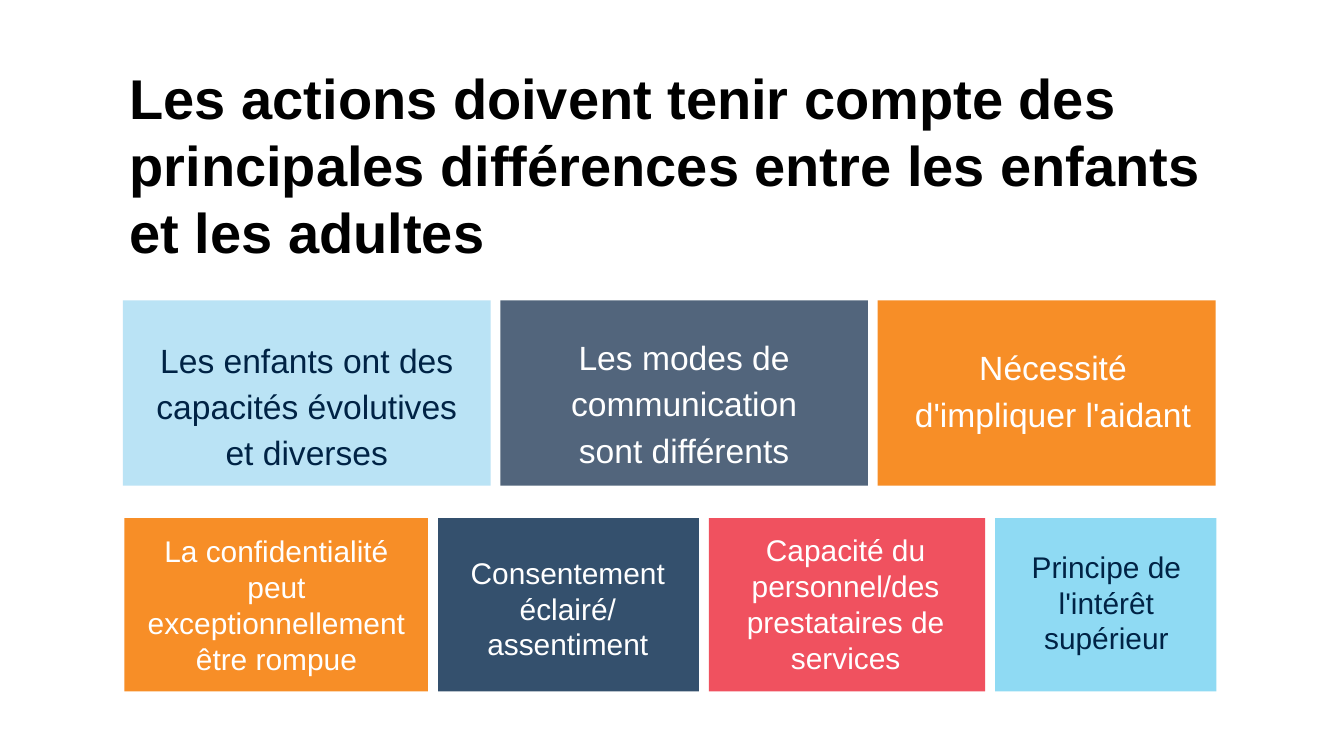
from lxml.etree import SubElement
from pptx import Presentation
from pptx.dml.color import RGBColor
from pptx.enum.shapes import MSO_SHAPE as SHAPE
from pptx.enum.text import MSO_ANCHOR as ANCHOR, MSO_AUTO_SIZE as AUTO, PP_ALIGN as ALIGN
from pptx.oxml.ns import qn
from pptx.util import Pt

BLACK = RGBColor(0x00, 0x00, 0x00)
WHITE = RGBColor(0xFF, 0xFF, 0xFF)
NAVY = RGBColor(0x00, 0x23, 0x45)
PALE_BLUE = RGBColor(0x9A, 0xD7, 0xF1)
SLATE = RGBColor(0x3D, 0x53, 0x6C)
ORANGE = RGBColor(0xF7, 0x8E, 0x27)
DARK_BLUE = RGBColor(0x16, 0x37, 0x58)
RED = RGBColor(0xEC, 0x1B, 0x2D)
CYAN = RGBColor(0x00, 0xAD, 0xE4)

FONT = "Arial"
TITLE = ("Les actions doivent tenir compte des principales différences "
         "entre les enfants et les adultes")

# Tile: width, fill, opacity in %, text, text colour, text box (left, top, width, height)
CHILD_TILES = [
    (393.8, PALE_BLUE, 68, "Les enfants ont des capacités évolutives et diverses",
     NAVY, (157.7, 356.4, 342, 151.2)),
    (393.8, SLATE, 89, "Les modes de communication sont différents",
     WHITE, (591.1, 353.5, 283.7, 151.2)),
    (362.2, ORANGE, 100, "Nécessité d'impliquer l'aidant",
     WHITE, (972, 365, 312.5, 100.8)),
]
PRINCIPLE_TILES = [
    (325.4, ORANGE, 100, "La confidentialité peut exceptionnellement être rompue",
     WHITE, (148.3, 566.6, 295.9, 162.7)),
    (279.4, DARK_BLUE, 87, "Consentement éclairé/\nassentiment",
     WHITE, (468.7, 589.7, 279.4, 123.8)),
    (295.9, RED, 76, "Capacité du personnel/des prestataires de services",
     WHITE, (777.6, 565.2, 257, 162.7)),
    (236.9, CYAN, 44, "Principe de l'intérêt supérieur",
     NAVY, (1077.8, 583.2, 215.3, 123.8)),
]


def add_text(s, box, text, *, size, color, bold=False, align=ALIGN.LEFT,
             anchor=ANCHOR.TOP, spacing=1.0):
    tf = s.shapes.add_textbox(*map(Pt, box)).text_frame
    tf.word_wrap = True
    tf.auto_size = AUTO.SHAPE_TO_FIT_TEXT
    tf.vertical_anchor = anchor
    p = tf.paragraphs[0]
    p.text = text.replace("\n", "\v")
    p.alignment = align
    p.line_spacing = spacing
    for r in p.runs:
        r.font.name = FONT
        r.font.size = Pt(size)
        r.font.bold = bold
        r.font.color.rgb = color


def add_rect(s, box, color, opacity):
    sp = s.shapes.add_shape(SHAPE.RECTANGLE, *map(Pt, box))
    sp.shadow.inherit = False
    sp.line.fill.background()
    sp.fill.solid()
    sp.fill.fore_color.rgb = color
    if opacity < 100:
        clr = sp.element.spPr.find(qn("a:solidFill")).find(qn("a:srgbClr"))
        SubElement(clr, qn("a:alpha")).set("val", str(opacity * 1000))


def add_tile_row(s, tiles, *, left, top, height, gap, size, spacing):
    for width, fill, opacity, text, color, text_box in tiles:
        add_rect(s, (left, top, width, height), fill, opacity)
        add_text(s, text_box, text, size=size, color=color, align=ALIGN.CENTER,
                 anchor=ANCHOR.MIDDLE, spacing=spacing)
        left += width + gap


def main():
    prs = Presentation()
    prs.slide_width, prs.slide_height = Pt(1440), Pt(810)
    s = prs.slides.add_slide(prs.slide_layouts[6])
    add_text(s, (131.8, 64.1, 1170, 225.4), TITLE, size=60, color=BLACK, bold=True)
    add_tile_row(s, CHILD_TILES, left=131.8, top=321.8, height=198.7, gap=10.5,
                 size=36, spacing=1.15)
    add_tile_row(s, PRINCIPLE_TILES, left=133.2, top=555.1, height=185.8, gap=10.8,
                 size=32, spacing=1.0)
    prs.save("out.pptx")


if __name__ == "__main__":
    main()
